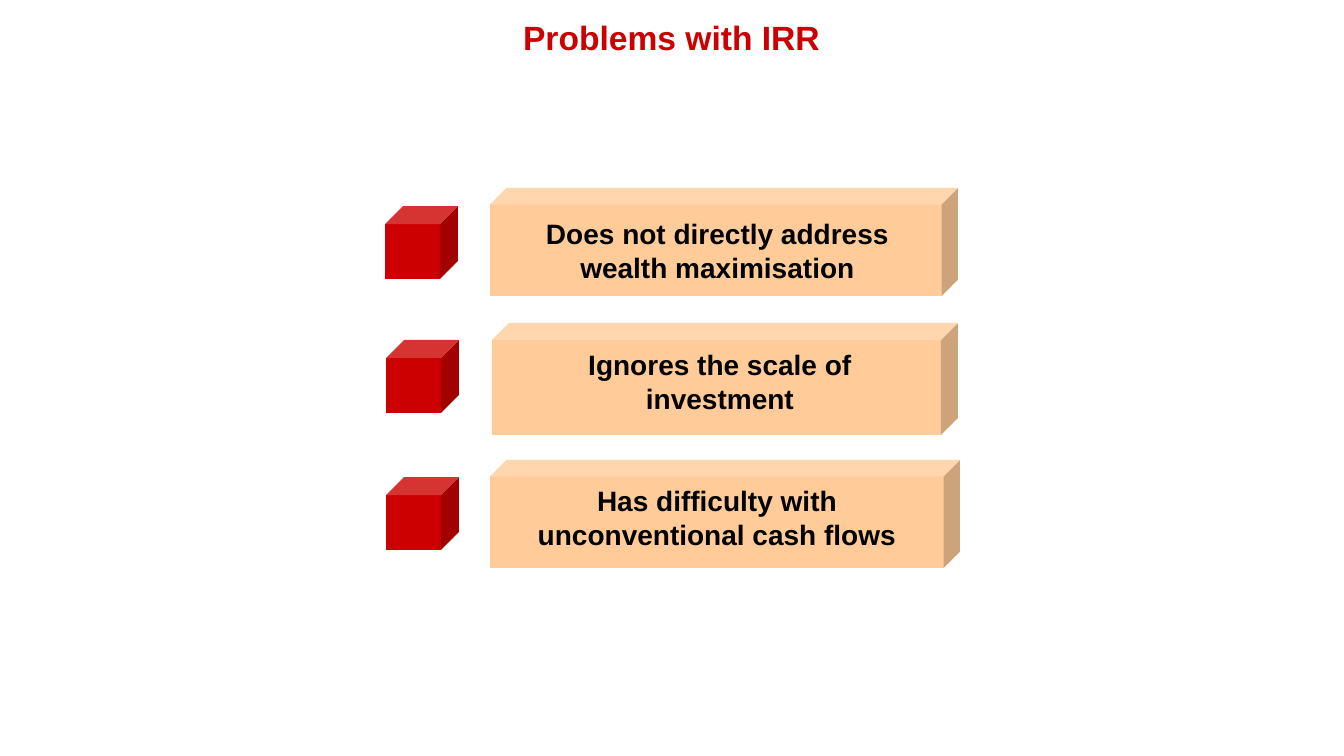
from pptx import Presentation
from pptx.dml.color import RGBColor
from pptx.enum.shapes import MSO_SHAPE
from pptx.enum.text import MSO_ANCHOR, PP_ALIGN
from pptx.util import Emu, Pt

CUBE = MSO_SHAPE.CUBE
TOP = MSO_ANCHOR.TOP
CENTER = PP_ALIGN.CENTER

RED = RGBColor(0xCC, 0x00, 0x00)
PEACH = RGBColor(0xFF, 0xCC, 0x99)
BLACK = RGBColor(0x00, 0x00, 0x00)

EMU_PER_PX = 914400 / 100.8


def px(*lengths):
    return [Emu(round(length * EMU_PER_PX)) for length in lengths]


def write(holder, text, size, color):
    frame = holder.text_frame
    frame.word_wrap = True
    frame.vertical_anchor = TOP
    frame.text = text
    paragraph = frame.paragraphs[0]
    paragraph.alignment = CENTER
    font_format = {"name": "Arial", "size": Pt(size), "bold": True}
    for attribute, value in font_format.items():
        setattr(paragraph.font, attribute, value)
    paragraph.font.color.rgb = color


deck = Presentation()
deck.slide_width, deck.slide_height = px(1344, 756)
slide = deck.slides.add_slide(deck.slide_layouts[5])

# Title
title = slide.shapes.title
title.left, title.top, title.width, title.height = px(280, 12, 783, 50)
write(title, "Problems with IRR", 24, RED)

# Problems: wording, bar box, wording box, marker position
MARKER_SIZE = 73
problems = [
    ("Does not directly address wealth maximisation",
     (490, 188, 468, 108), (491, 212, 453, 78), (385, 206)),
    ("Ignores the scale of investment",
     (492, 323, 466, 112), (508, 343, 424, 78), (386, 340)),
    ("Has difficulty with unconventional cash flows",
     (490, 460, 470, 108), (504, 479, 426, 78), (386, 477)),
]

for wording, bar_box, wording_box, marker_position in problems:
    marker_box = (*marker_position, MARKER_SIZE, MARKER_SIZE)
    for box, depth, color in ((bar_box, 0.152, PEACH), (marker_box, 0.247, RED)):
        block = slide.shapes.add_shape(CUBE, *px(*box))
        block.adjustments[0] = depth
        block.fill.solid()
        block.fill.fore_color.rgb = color
        block.line.fill.background()
        block.shadow.inherit = False
    write(slide.shapes.add_textbox(*px(*wording_box)), wording, 20, BLACK)

deck.save("out.pptx")
